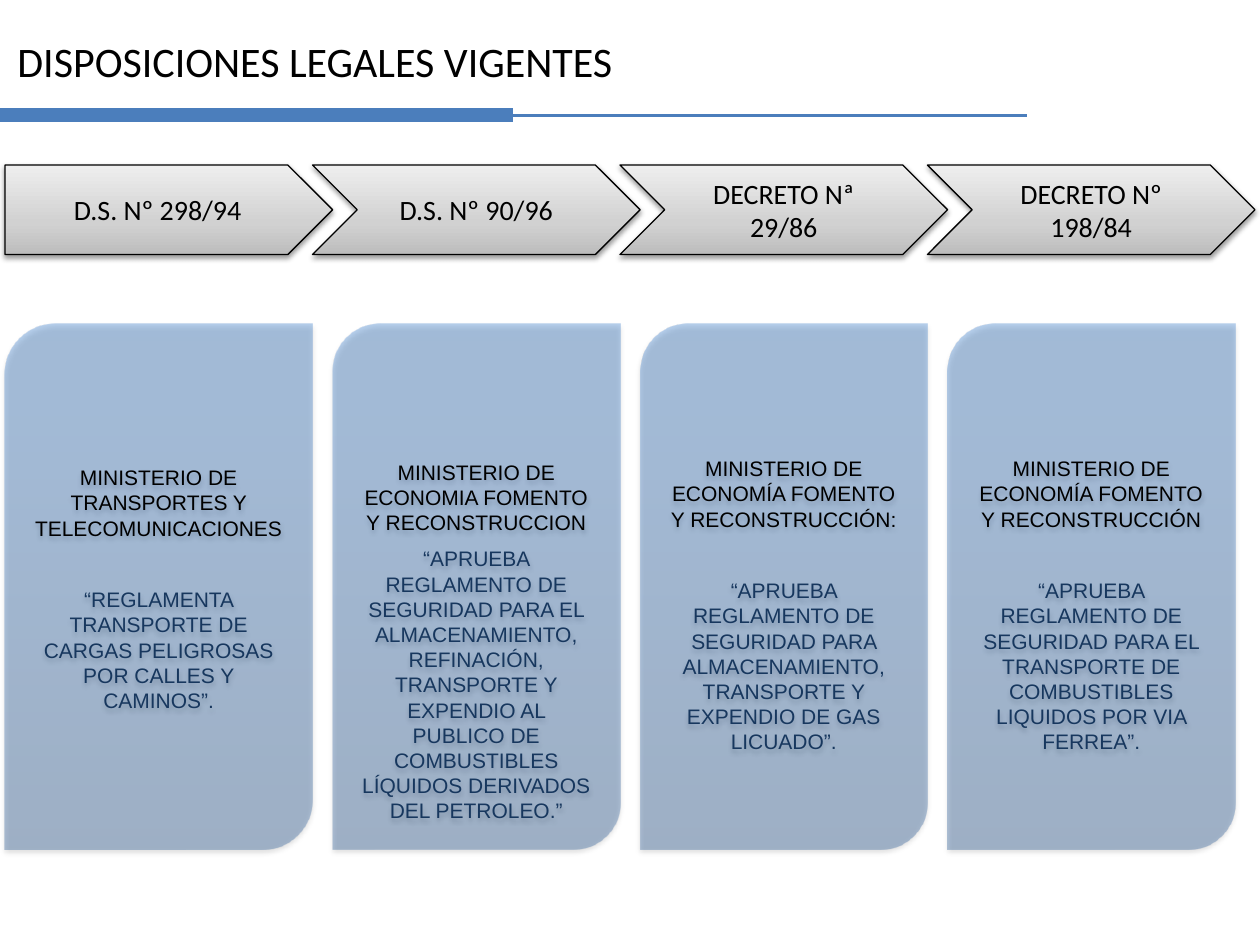
from dataclasses import dataclass

from lxml import etree
from pptx import Presentation
from pptx.dml.color import RGBColor
from pptx.enum.shapes import MSO_CONNECTOR, MSO_SHAPE
from pptx.enum.text import MSO_ANCHOR, PP_ALIGN
from pptx.oxml import parse_xml
from pptx.oxml.ns import nsdecls, qn
from pptx.util import Pt


@dataclass(frozen=True)
class Theme:
    rule: str = "4B7EBC"
    ink: str = "000000"
    navy: str = "17375E"
    # Gradient stops: position %, colour, opacity %
    grey: tuple = ((0, "BDBDBD", 100), (35, "D1D1D1", 100), (100, "EEEEEE", 100))
    blue: tuple = ((0, "2F5F99", 36), (80, "3D7CC7", 36), (100, "3A7CCB", 36))
    head_font: str = "Calibri"
    body_font: str = "Arial"
    title_size: int = 24
    arrow_size: int = 16
    body_size: int = 12
    body_line: float = 14.4


T = Theme()

# Arrow label, ministry, summary, text inset from card top, gap before summary
DECREES = [
    ("D.S. Nº 298/94", "MINISTERIO DE TRANSPORTES Y TELECOMUNICACIONES",
     "“REGLAMENTA TRANSPORTE DE CARGAS PELIGROSAS POR CALLES Y CAMINOS”.", 72, 26.5),
    ("D.S. Nº 90/96", "MINISTERIO DE ECONOMIA FOMENTO Y RECONSTRUCCION",
     "“APRUEBA REGLAMENTO DE SEGURIDAD PARA EL ALMACENAMIENTO, REFINACIÓN, "
     "TRANSPORTE Y EXPENDIO AL PUBLICO DE COMBUSTIBLES LÍQUIDOS DERIVADOS "
     "DEL PETROLEO.”", 69.5, 6.3),
    ("DECRETO Nª 29/86", "MINISTERIO DE ECONOMÍA FOMENTO Y RECONSTRUCCIÓN:",
     "“APRUEBA REGLAMENTO DE SEGURIDAD PARA ALMACENAMIENTO, TRANSPORTE Y "
     "EXPENDIO DE GAS LICUADO”.", 67.5, 26.5),
    ("DECRETO Nº 198/84", "MINISTERIO DE ECONOMÍA FOMENTO Y RECONSTRUCCIÓN",
     "“APRUEBA REGLAMENTO DE SEGURIDAD PARA EL TRANSPORTE DE COMBUSTIBLES "
     "LIQUIDOS POR VIA FERREA”.", 67.5, 26.5),
]


def set_text(p, text, font, size, color):
    p.text = text
    p.font.name, p.font.size = font, Pt(size)
    p.font.color.rgb = RGBColor.from_string(color)


def set_gradient(sp, stops):
    """Fill from bottom to top."""
    sp.fill.gradient()
    sp.fill.gradient_angle = 90
    gs_list = sp._element.spPr.find(qn("a:gradFill")).find(qn("a:gsLst"))
    for gs in list(gs_list):
        gs_list.remove(gs)
    for pos, color, opacity in stops:
        gs_list.append(parse_xml(
            f'<a:gs {nsdecls("a")} pos="{pos * 1000}"><a:srgbClr val="{color}">'
            f'<a:alpha val="{opacity * 1000}"/></a:srgbClr></a:gs>'))


def set_shadow(sp, opacity, blur, dist):
    sp.shadow.inherit = False
    effects = sp._element.spPr.find(qn("a:effectLst"))
    effects.append(parse_xml(
        f'<a:outerShdw {nsdecls("a")} blurRad="{Pt(blur)}" dist="{Pt(dist)}" '
        f'dir="5400000" rotWithShape="0"><a:srgbClr val="{T.ink}">'
        f'<a:alpha val="{opacity * 1000}"/></a:srgbClr></a:outerShdw>'))


def add_header(s, x, y, w, h):
    # Thin rule with a thick first half
    for length, weight in ((w, 1.75), (w / 2, 8)):
        line = s.shapes.add_connector(
            MSO_CONNECTOR.STRAIGHT, Pt(x), Pt(y + h), Pt(x + length), Pt(y + h))
        line.line.color.rgb = RGBColor.from_string(T.rule)
        line.line.width = Pt(weight)
        etree.SubElement(line._element.spPr, qn("a:effectLst"))
    # Title
    tf = s.shapes.add_textbox(Pt(x + 2.9), Pt(y), Pt(371), Pt(36)).text_frame
    tf.word_wrap = False
    set_text(tf.paragraphs[0], "DISPOSICIONES LEGALES VIGENTES",
             T.head_font, T.title_size, T.ink)


def add_arrow(s, x, y, w, h, kind, label):
    sp = s.shapes.add_shape(kind, Pt(x), Pt(y), Pt(w), Pt(h))
    set_gradient(sp, T.grey)
    sp.line.color.rgb = RGBColor.from_string(T.ink)
    sp.line.width = Pt(0.75)
    set_shadow(sp, 38, 3.1, 1.6)
    tf = sp.text_frame
    tf.word_wrap = True
    tf.vertical_anchor = MSO_ANCHOR.MIDDLE
    tf.margin_left = tf.margin_right = Pt(12)
    p = tf.paragraphs[0]
    p.alignment = PP_ALIGN.CENTER
    set_text(p, label, T.head_font, T.arrow_size, T.ink)


def add_card(s, x, y, w, h, ministry, summary, inset, gap):
    sp = s.shapes.add_shape(MSO_SHAPE.ROUND_2_DIAG_RECTANGLE,
                            Pt(x), Pt(y), Pt(w), Pt(h))
    set_gradient(sp, T.blue)
    sp.line.fill.background()
    set_shadow(sp, 35, 3.1, 1.8)
    tf = sp.text_frame
    tf.word_wrap = True
    tf.vertical_anchor = MSO_ANCHOR.TOP
    tf.margin_top = Pt(inset)
    paragraphs = (tf.paragraphs[0], tf.add_paragraph())
    for p, text, color in zip(paragraphs, (ministry, summary), (T.ink, T.navy)):
        p.alignment = PP_ALIGN.CENTER
        p.line_spacing = Pt(T.body_line)
        set_text(p, text, T.body_font, T.body_size, color)
    paragraphs[1].space_before = Pt(gap)


def add_decrees(s, x, y, w, h):
    overlap, arrow_h, card_top = 11.5, 51.1, 90.7
    step = (w - overlap) / len(DECREES)
    for i, (label, *card) in enumerate(DECREES):
        left = x + i * step
        kind = MSO_SHAPE.CHEVRON if i else MSO_SHAPE.PENTAGON
        add_arrow(s, left, y, step + overlap, arrow_h, kind, label)
        # Each card starts at the tip of the previous arrow
        tip = overlap if i else 0
        add_card(s, left + tip, y + card_top, step - tip, h - card_top, *card)


def main():
    prs = Presentation()
    prs.slide_width, prs.slide_height = Pt(720), Pt(540)
    s = prs.slides.add_slide(prs.slide_layouts[6])
    add_header(s, 0, 16.6, 586.8, 49.4)
    add_decrees(s, 2.9, 94.3, 714.3, 391)
    prs.save("out.pptx")


if __name__ == "__main__":
    main()
